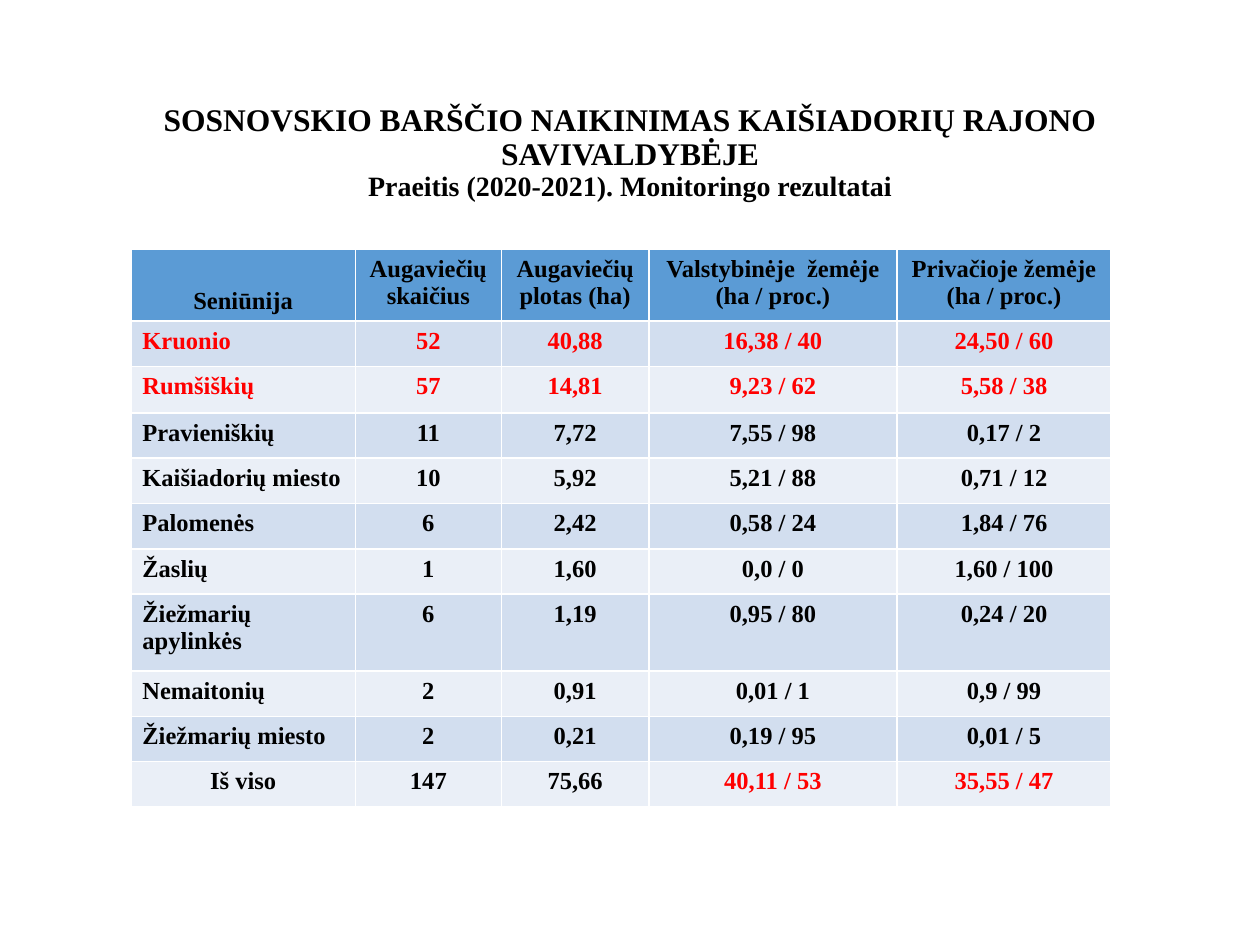
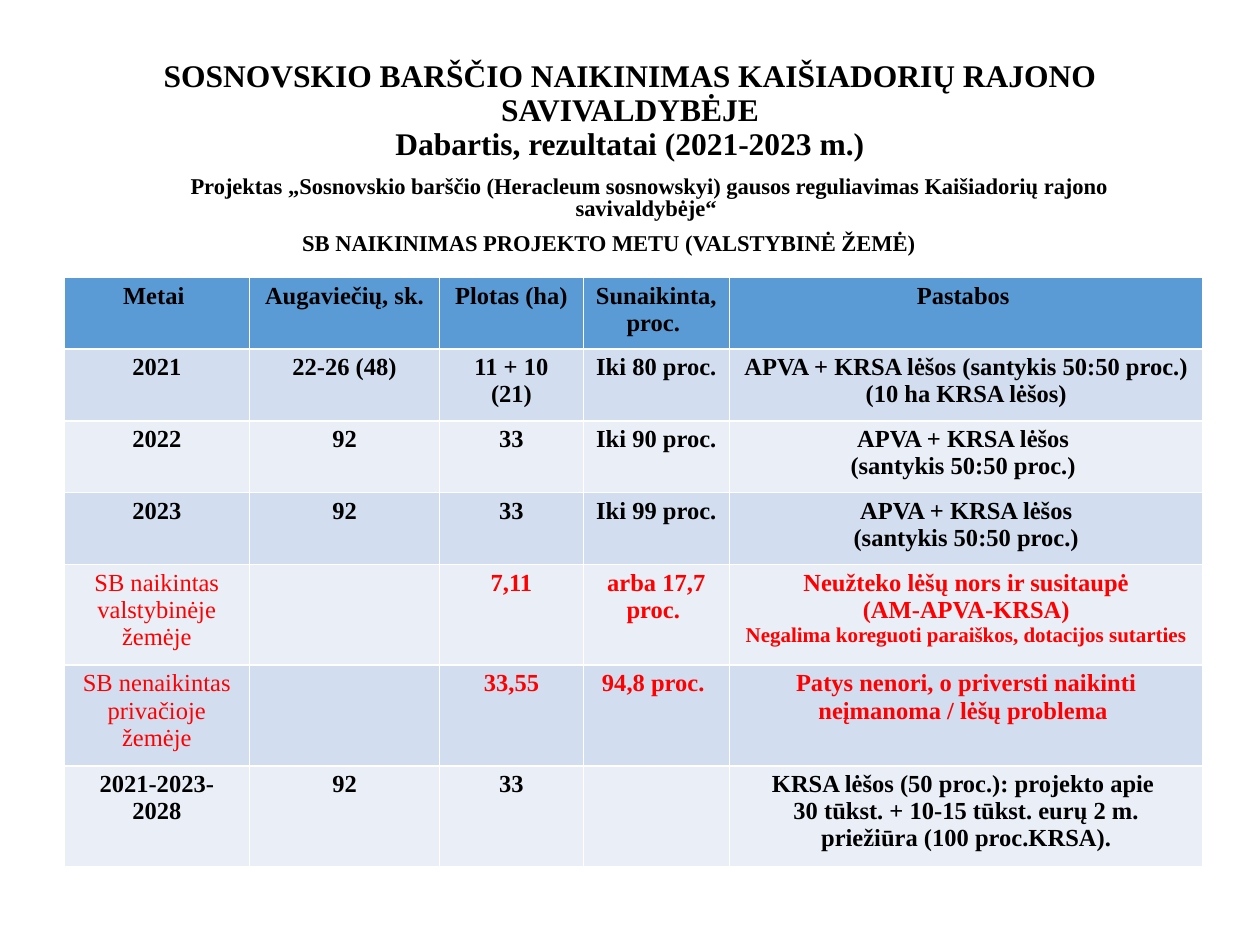
from dataclasses import dataclass

from pptx import Presentation
from pptx.dml.color import RGBColor
from pptx.enum.text import MSO_ANCHOR, PP_ALIGN
from pptx.util import Inches, Pt


@dataclass(frozen=True)
class Theme:
    font: str = "Times New Roman"
    ink: str = "000000"
    alert: str = "FF0000"
    header: str = "5B9BD5"
    bands: tuple = ("D2DEEF", "EAEFF7")
    title: float = 18
    subtitle: float = 16
    cell: float = 14
    project: float = 12.9
    note: float = 12


HEADING = "SOSNOVSKIO BARŠČIO NAIKINIMAS KAIŠIADORIŲ RAJONO SAVIVALDYBĖJE"

MONITORING = [
    ("Seniūnija", "Augaviečių skaičius", "Augaviečių plotas (ha)",
     "Valstybinėje  žemėje (ha / proc.)", "Privačioje žemėje\n(ha / proc.)"),
    ("Kruonio", "52", "40,88", "16,38 / 40", "24,50 / 60"),
    ("Rumšiškių", "57", "14,81", "9,23 / 62", "5,58 / 38"),
    ("Pravieniškių", "11", "7,72", "7,55 / 98", "0,17 / 2"),
    ("Kaišiadorių miesto", "10", "5,92", "5,21 / 88", "0,71 / 12"),
    ("Palomenės", "6", "2,42", "0,58 / 24", "1,84 / 76"),
    ("Žaslių", "1", "1,60", "0,0 / 0", "1,60 / 100"),
    ("Žiežmarių apylinkės", "6", "1,19", "0,95 / 80", "0,24 / 20"),
    ("Nemaitonių", "2", "0,91", "0,01 / 1", "0,9 / 99"),
    ("Žiežmarių miesto", "2", "0,21", "0,19 / 95", "0,01 / 5"),
    ("Iš viso", "147", "75,66", "40,11 / 53", "35,55 / 47"),
]

RESULTS = [
    ("Metai ", "Augaviečių, sk.", "Plotas (ha)", "Sunaikinta, proc. ", "Pastabos "),
    ("2021", "22-26 (48)", "11 + 10 (21)", "Iki 80 proc. ",
     "APVA + KRSA lėšos (santykis 50:50 proc.) (10 ha KRSA lėšos)"),
    ("2022", "92", "33", "Iki 90 proc.",
     "APVA + KRSA lėšos \n(santykis 50:50 proc.) "),
    ("2023", "92", "33", "Iki 99 proc. ",
     "APVA + KRSA lėšos\n(santykis 50:50 proc.)"),
    ("SB naikintas\nvalstybinėje žemėje", "", "7,11", "arba 17,7 proc. ",
     "Neužteko lėšų nors ir susitaupė\n(AM-APVA-KRSA)\n"
     "Negalima koreguoti paraiškos, dotacijos sutarties"),
    ("SB nenaikintas\nprivačioje žemėje", "", "33,55", "94,8 proc. ",
     "Patys nenori, o priversti naikinti neįmanoma / lėšų problema "),
    ("2021-2023-2028", "92", "33", "",
     "KRSA lėšos (50 proc.): projekto apie \n"
     "30 tūkst. + 10-15 tūkst. eurų 2 m. priežiūra (100 proc.KRSA)."),
]


class DeckBuilder:
    def __init__(self, theme):
        self.theme = theme
        self.deck = Presentation()
        self.deck.slide_width = Inches(10)
        self.deck.slide_height = Inches(7.5)
        self.page = None

    def add_page(self):
        self.page = self.deck.slides.add_slide(self.deck.slide_layouts[6])

    def style(self, span, size, color=None, bold=True):
        span.font.name = self.theme.font
        span.font.size = Pt(size)
        span.font.bold = bold
        span.font.color.rgb = RGBColor.from_string(color or self.theme.ink)

    def text_box(self, left, top, width, height):
        box = self.page.shapes.add_textbox(
            Inches(left), Inches(top), Inches(width), Inches(height))
        box.text_frame.word_wrap = True
        return box.text_frame

    def title(self, top, height, subtitle, subtitle_size):
        frame = self.text_box(0.69, top, 8.62, height)
        frame.vertical_anchor = MSO_ANCHOR.MIDDLE
        para = frame.paragraphs[0]
        para.text = f"{HEADING}\v{subtitle}"
        para.alignment = PP_ALIGN.CENTER
        para.line_spacing = 0.9
        for span, size in zip(para.runs, (self.theme.title, subtitle_size)):
            self.style(span, size)

    def project_lines(self, project, caption):
        frame = self.text_box(1.11, 1.36, 8.08, 0.75)
        frame.text = f"{project}\n{caption}"
        for para in frame.paragraphs:
            para.line_spacing = 0.8
            para.space_before = Pt(7.5)
            self.style(para.runs[0], self.theme.project)
        first, second = frame.paragraphs
        first.alignment = PP_ALIGN.CENTER
        second.alignment = PP_ALIGN.LEFT
        second._p.get_or_add_pPr().set("marL", str(Inches(1.19)))

    def table(self, left, top, rows, widths, heights, margins, alerts):
        table = self.page.shapes.add_table(
            len(rows), len(widths), Inches(left), Inches(top),
            Inches(sum(widths)), Inches(sum(heights))).table
        for column, width in zip(table.columns, widths):
            column.width = Inches(width)
        for row, height in zip(table.rows, heights):
            row.height = Inches(height)
        side, edge = margins
        for r, values in enumerate(rows):
            fill = self.theme.bands[(r - 1) % 2] if r else self.theme.header
            for c, value in enumerate(values):
                cell = table.cell(r, c)
                cell.margin_left = cell.margin_right = Inches(side)
                cell.margin_top = cell.margin_bottom = Inches(edge)
                cell.fill.solid()
                cell.fill.fore_color.rgb = RGBColor.from_string(fill)
                color = self.theme.alert if (r, c) in alerts else self.theme.ink
                self.fill_cell(cell, value, color)
        return table

    def fill_cell(self, cell, value, color):
        cell.text_frame.text = value
        for para in cell.text_frame.paragraphs:
            para.alignment = PP_ALIGN.CENTER
            for span in para.runs:
                self.style(span, self.theme.cell, color)


def monitoring_page(builder):
    builder.add_page()
    builder.title(0.64, 1.15, "Praeitis (2020-2021). Monitoringo rezultatai",
                  builder.theme.subtitle)
    heights = [0.56] + [0.36] * 10
    heights[2] = 0.37
    heights[7] = 0.61
    alerts = {(r, c) for r in (1, 2) for c in range(5)} | {(10, 3), (10, 4)}
    table = builder.table(1.04, 1.98, MONITORING, [1.78, 1.16, 1.17, 1.97, 1.7],
                          heights, (0.09, 0.05), alerts)
    table.cell(0, 0).vertical_anchor = MSO_ANCHOR.BOTTOM
    for r in range(1, len(MONITORING) - 1):
        table.cell(r, 0).text_frame.paragraphs[0].alignment = PP_ALIGN.LEFT


def results_page(builder):
    builder.add_page()
    builder.title(0.4, 0.96, "Dabartis, rezultatai (2021-2023 m.)",
                  builder.theme.title)
    alerts = {(r, c) for r in (4, 5) for c in range(5)}
    table = builder.table(0.51, 2.2, RESULTS, [1.47, 1.51, 1.14, 1.16, 3.76],
                          [0.57] * 4 + [0.8] * 3, (0.1, 0.04), alerts)
    for r in (4, 5):
        for para in table.cell(r, 0).text_frame.paragraphs:
            para.runs[0].font.bold = False
    note = table.cell(4, 4).text_frame.paragraphs[-1].runs[0]
    note.font.size = Pt(builder.theme.note)
    builder.project_lines(
        "Projektas „Sosnovskio barščio (Heracleum sosnowskyi) gausos "
        "reguliavimas Kaišiadorių rajono savivaldybėje“ ",
        "SB NAIKINIMAS PROJEKTO METU (VALSTYBINĖ ŽEMĖ)")


def main():
    builder = DeckBuilder(Theme())
    monitoring_page(builder)
    results_page(builder)
    builder.deck.save("out.pptx")


if __name__ == "__main__":
    main()
